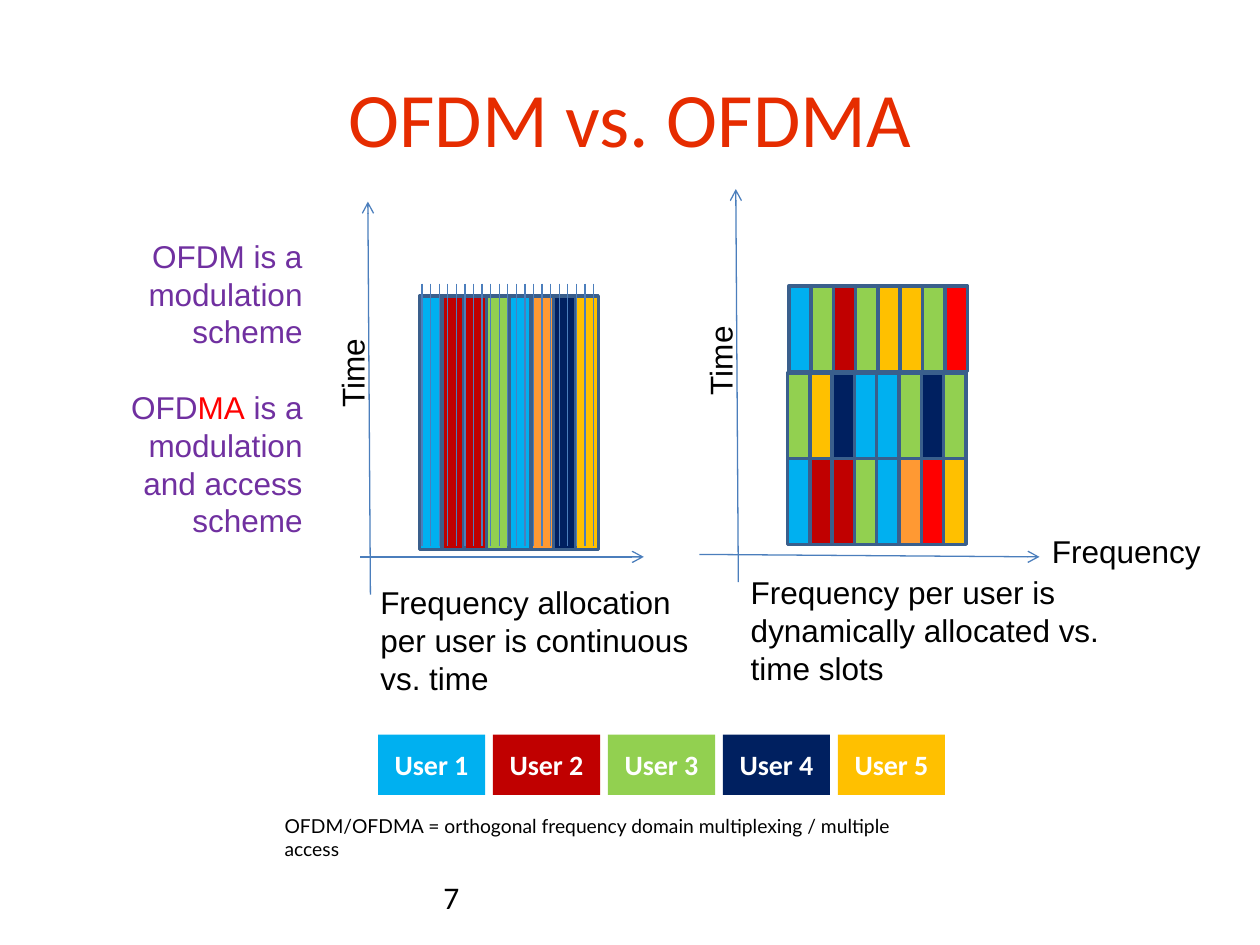
from dataclasses import dataclass

from lxml import etree
from pptx import Presentation
from pptx import util as u
from pptx.dml.color import RGBColor
from pptx.enum import shapes, text
from pptx.oxml.ns import qn

SKY, RED, GREEN, ORANGE, NAVY, GOLD, SCARLET = (
    "00B0F0", "C00000", "92D050", "FF9933", "002060", "FFC000", "FF0000")
BLACK, WHITE, PURPLE, TITLE_RED = "000000", "FFFFFF", "7030A0", "E62C00"
CELL_EDGE, AXIS_BLUE = "3A5F8C", "4B7EBC"
CELL_WIDTH, CELL_STEP = 0.18, 0.177


@dataclass
class Label:
    words: str
    left: float
    top: float
    width: float
    height: float
    size: float = 18
    font: str = "Arial"
    color: str = BLACK
    rotation: float = 0
    wrap: bool = True
    align: text.PP_ALIGN = text.PP_ALIGN.LEFT
    anchor: text.MSO_ANCHOR = text.MSO_ANCHOR.TOP


@dataclass
class Band:
    left: float
    top: float
    height: float
    users: tuple[str, ...]


@dataclass
class Axis:
    start: tuple[float, float]
    end: tuple[float, float]


LABELS = [
    Label("OFDM vs. OFDMA", 0.5, 0.3, 9, 1.25, 44, "Calibri", TITLE_RED,
          align=text.PP_ALIGN.CENTER, anchor=text.MSO_ANCHOR.MIDDLE),
    Label("Frequency", 8.25, 4.17, 1.39, 0.4, wrap=False),
    Label("Time", 2.42, 2.76, 0.75, 0.4, rotation=270, wrap=False),
    Label("Time", 5.34, 2.66, 0.75, 0.4, rotation=270, wrap=False),
    Label("Frequency allocation per user is continuous vs. time", 2.92, 4.58, 2.83, 1.01),
    Label("Frequency per user is dynamically allocated vs. time slots", 5.86, 4.5, 3.31, 1.01),
    Label("OFDM/OFDMA = orthogonal frequency domain multiplexing / multiple access",
          2.16, 6.41, 5.42, 0.29, 11, "Lato"),
    Label("7", 3.42, 6.92, 2.33, 0.4, font="Calibri"),
]
BANDS = [
    Band(3.33, 2.35, 2.01, (SKY, RED, RED, GREEN, SKY, ORANGE, NAVY, GOLD)),
    Band(6.25, 3.64, 0.68, (SKY, RED, RED, GREEN, SKY, ORANGE, SCARLET, GOLD)),
    Band(6.25, 2.96, 0.68, (GREEN, GOLD, NAVY, SKY, SKY, GREEN, NAVY, GREEN)),
    Band(6.26, 2.27, 0.68, (SKY, GREEN, RED, GREEN, GOLD, GOLD, GREEN, SCARLET)),
]
AXES = [
    Axis((2.86, 4.42), (5.11, 4.42)),
    Axis((2.94, 4.72), (2.92, 1.6)),
    Axis((5.55, 4.4), (8.25, 4.42)),
    Axis((5.86, 4.62), (5.84, 1.5)),
]


def rgb(value: str) -> RGBColor:
    return RGBColor.from_string(value)


def style(font, size: float, name: str, color: str) -> None:
    font.size, font.name = u.Pt(size), name
    font.color.rgb = rgb(color)


def draw_label(slide, label: Label):
    box = slide.shapes.add_textbox(*map(u.Inches, (label.left, label.top, label.width, label.height)))
    box.rotation = label.rotation
    frame = box.text_frame
    frame.word_wrap, frame.vertical_anchor = label.wrap, label.anchor
    line = frame.paragraphs[0]
    line.text, line.alignment = label.words, label.align
    style(line.font, label.size, label.font, label.color)
    return frame


def draw_rectangle(slide, left: float, top: float, width: float, height: float, fill: str):
    block = slide.shapes.add_shape(shapes.MSO_SHAPE.RECTANGLE,
                                   *map(u.Inches, (left, top, width, height)))
    block.shadow.inherit = False
    block.fill.solid()
    block.fill.fore_color.rgb = rgb(fill)
    block.line.fill.background()
    return block


def draw_band(slide, band: Band) -> None:
    for column, user in enumerate(band.users):
        cell = draw_rectangle(slide, band.left + column * CELL_STEP, band.top,
                              CELL_WIDTH, band.height, user)
        cell.line.color.rgb = rgb(CELL_EDGE)
        cell.line.width = u.Pt(2)


def draw_line(slide, axis: Axis, arrow: bool = False) -> None:
    line = slide.shapes.add_connector(shapes.MSO_CONNECTOR.STRAIGHT,
                                      *map(u.Inches, axis.start + axis.end))
    line.line.color.rgb = rgb(AXIS_BLUE)
    line.line.width = u.Pt(0.75)
    if arrow:
        etree.SubElement(line.line._get_or_add_ln(), qn("a:tailEnd"), type="arrow")
    etree.SubElement(line._element.spPr, qn("a:effectLst"))


def draw_legend(slide) -> None:
    for index, color in enumerate((SKY, RED, GREEN, NAVY, GOLD)):
        key = draw_rectangle(slide, 3 + index * 0.9125, 5.83, 0.85, 0.48, color)
        key.text_frame.vertical_anchor = text.MSO_ANCHOR.MIDDLE
        name = key.text_frame.paragraphs[0]
        name.text, name.alignment = f"User {index + 1}", text.PP_ALIGN.CENTER
        style(name.font, 16, "Calibri", WHITE)
        name.font.bold = True


def draw_definitions(slide) -> None:
    frame = draw_label(slide, Label("OFDM is a modulation scheme", 0.83, 1.83, 1.67, 2.52,
                                    color=PURPLE, align=text.PP_ALIGN.RIGHT))
    access = frame.add_paragraph()
    access.alignment = text.PP_ALIGN.RIGHT
    access.space_before = u.Pt(21.6)
    for words, color in (("OFD", PURPLE), ("MA", SCARLET),
                         (" is a modulation and access scheme", PURPLE)):
        run = access.add_run()
        run.text = words
        style(run.font, 18, "Arial", color)


def main() -> None:
    """Build the OFDM versus OFDMA slide."""
    deck = Presentation()
    deck.slide_width, deck.slide_height = u.Inches(10), u.Inches(7.5)
    slide = deck.slides.add_slide(deck.slide_layouts[6])
    for band in BANDS:
        draw_band(slide, band)
    for index in range(21):
        subcarrier = 3.35 + index * 0.068
        draw_line(slide, Axis((subcarrier, 2.25), (subcarrier, 4.33)))
    for axis in AXES:
        draw_line(slide, axis, arrow=True)
    for label in LABELS:
        draw_label(slide, label)
    draw_definitions(slide)
    draw_legend(slide)
    deck.save("out.pptx")


if __name__ == "__main__":
    main()
